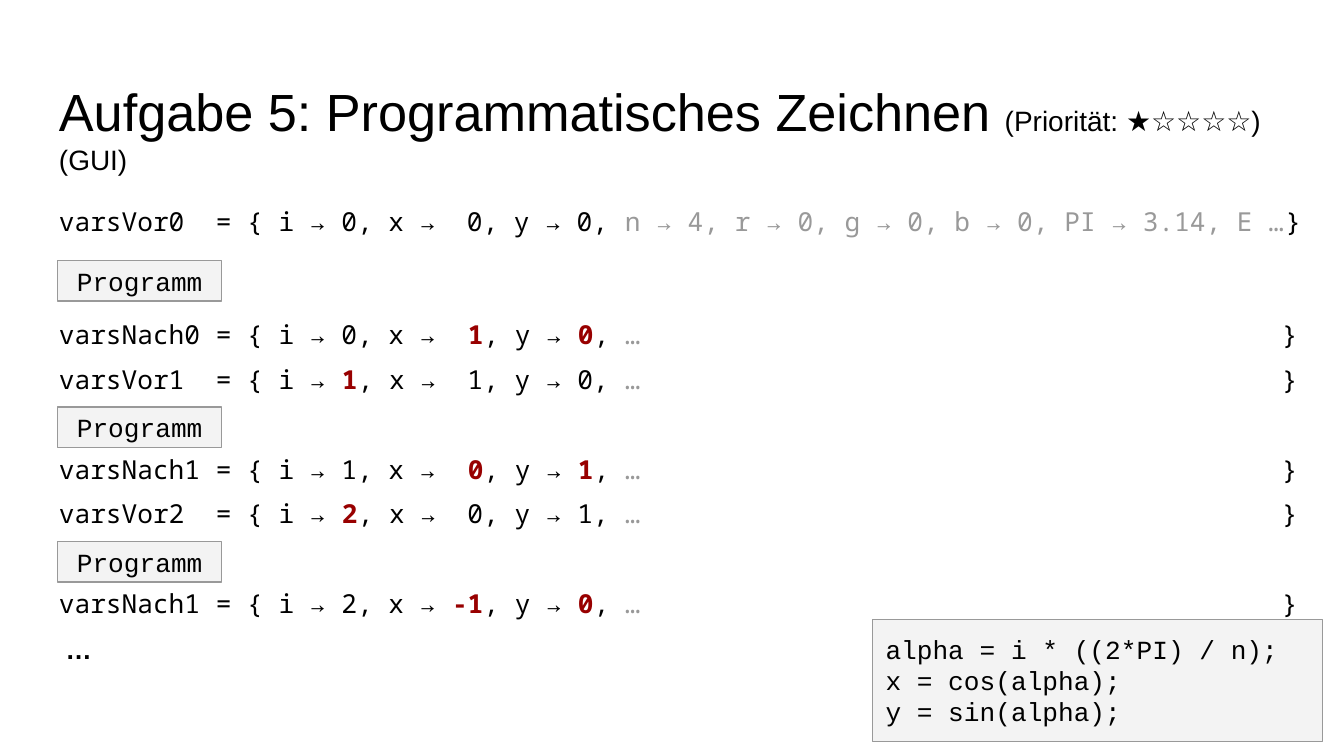
from lxml.etree import SubElement
from pptx import Presentation
from pptx.dml.color import RGBColor
from pptx.enum.shapes import MSO_SHAPE as Shape
from pptx.enum.text import MSO_ANCHOR as Anchor, PP_ALIGN as Align
from pptx.oxml.ns import qn
from pptx.util import Inches, Pt

# Square grid: 100 columns across the slide, 56.25 rows down
CELL = Inches(10) // 100
COLUMNS, ROWS = 100, 56.25
BLACK, GREY, RED, PALE = "000000", "999999", "980000", "F3F3F3"

SANS = {"name": "Arial", "size": Pt(14)}
CODE = {"name": "Courier New", "size": Pt(14)}
MONO = {"name": "Noto Sans Mono", "size": Pt(14)}
LEFT, WIDTH, LINE_HEIGHT = 3.4, 95, 4.8
BRACE_TAB = 91

# Top row, offsets of program and result, state before, state after.
# Values between asterisks have changed; the second item is grey.
ROUNDS = [
    (14.3, (5.1, 8.4),
     ("varsVor0  = { i → 0, x →  0, y → 0,",
      " n → 4, r → 0, g → 0, b → 0, PI → 3.14, E …"),
     ("varsNach0 = { i → 0, x →  *1*, y → *0*,", " …")),
    (26, (4.3, 6.7),
     ("varsVor1  = { i → *1*, x →  1, y → 0,", " …"),
     ("varsNach1 = { i → 1, x →  *0*, y → *1*,", " …")),
    (36, (4.3, 6.7),
     ("varsVor2  = { i → *2*, x →  0, y → 1,", " …"),
     ("varsNach1 = { i → 2, x → *-1*, y → *0*,", " …")),
]


def color(value):
    return RGBColor.from_string(value)


def grid(box):
    return [round(length * CELL) for length in box]


def set_frame(frame, anchor=Anchor.TOP):
    frame.word_wrap = True
    frame.vertical_anchor = anchor
    for side in ("left", "top", "right", "bottom"):
        setattr(frame, f"margin_{side}", CELL)


def add_span(para, text, style, ink=BLACK, bold=False):
    span = para.add_run()
    span.text = text
    for key, value in {**style, "bold": bold}.items():
        setattr(span.font, key, value)
    span.font.color.rgb = color(ink)


def add_text(page, box):
    frame = page.shapes.add_textbox(*grid(box)).text_frame
    set_frame(frame)
    return frame.paragraphs[0]


def add_panel(page, box, lines, align=Align.LEFT, anchor=Anchor.TOP):
    panel = page.shapes.add_shape(Shape.RECTANGLE, *grid(box))
    panel.shadow.inherit = False
    panel.fill.solid()
    panel.fill.fore_color.rgb = color(PALE)
    panel.line.color.rgb = color(GREY)
    panel.line.width = Pt(0.75)
    frame = panel.text_frame
    set_frame(frame, anchor)
    for number, text in enumerate(lines):
        para = frame.add_paragraph() if number else frame.paragraphs[0]
        para.alignment = align
        add_span(para, text, CODE)


def add_title(page, box):
    small = {**SANS, "size": Pt(15)}
    para = add_text(page, box)
    add_span(para, "Aufgabe 5: Programmatisches Zeichnen ", {**SANS, "size": Pt(28)})
    add_span(para, "(Priorität: ★☆☆☆☆)", small)
    para.add_line_break()
    add_span(para, "(GUI)", small)


def add_state(page, box, state):
    """One line of variables, with the brace at a shared tab stop."""
    values, rest = state
    para = add_text(page, box)
    for number, text in enumerate(values.split("*")):
        changed = number % 2 == 1
        add_span(para, text, MONO, RED if changed else BLACK, changed)
    add_span(para, rest, MONO, GREY)
    if rest == " …":
        tabs = SubElement(para._p.get_or_add_pPr(), qn("a:tabLst"))
        SubElement(tabs, qn("a:tab"), pos=str(BRACE_TAB * CELL), algn="l")
        add_span(para, "\t}", MONO)
    else:
        add_span(para, "}", MONO)


def add_round(page, box, offsets, before, after):
    left, top, width, height = box
    program, result = offsets
    add_state(page, box, before)
    add_state(page, (left, top + result, width, height), after)
    add_panel(page, (left + 0.9, top + program, 12.2, 3), ["Programm"],
              Align.CENTER, Anchor.MIDDLE)


def main():
    deck = Presentation()
    deck.slide_width, deck.slide_height = grid((COLUMNS, ROWS))
    page = deck.slides.add_slide(deck.slide_layouts[6])

    # Title
    add_title(page, (LEFT, 4.9, 93.2, 6.3))

    # Program code
    add_panel(page, (64.9, 46.1, 33.5, 9.1),
              ["alpha = i * ((2*PI) / n);", "x = cos(alpha);", "y = sin(alpha);"])

    # Rounds of the program
    for top, offsets, before, after in ROUNDS:
        add_round(page, (LEFT, top, WIDTH, LINE_HEIGHT), offsets, before, after)

    # Continuation
    add_span(add_text(page, (3.9, 46.1, 12.9, LINE_HEIGHT)), "…", SANS, bold=True)

    deck.save("out.pptx")


if __name__ == "__main__":
    main()
